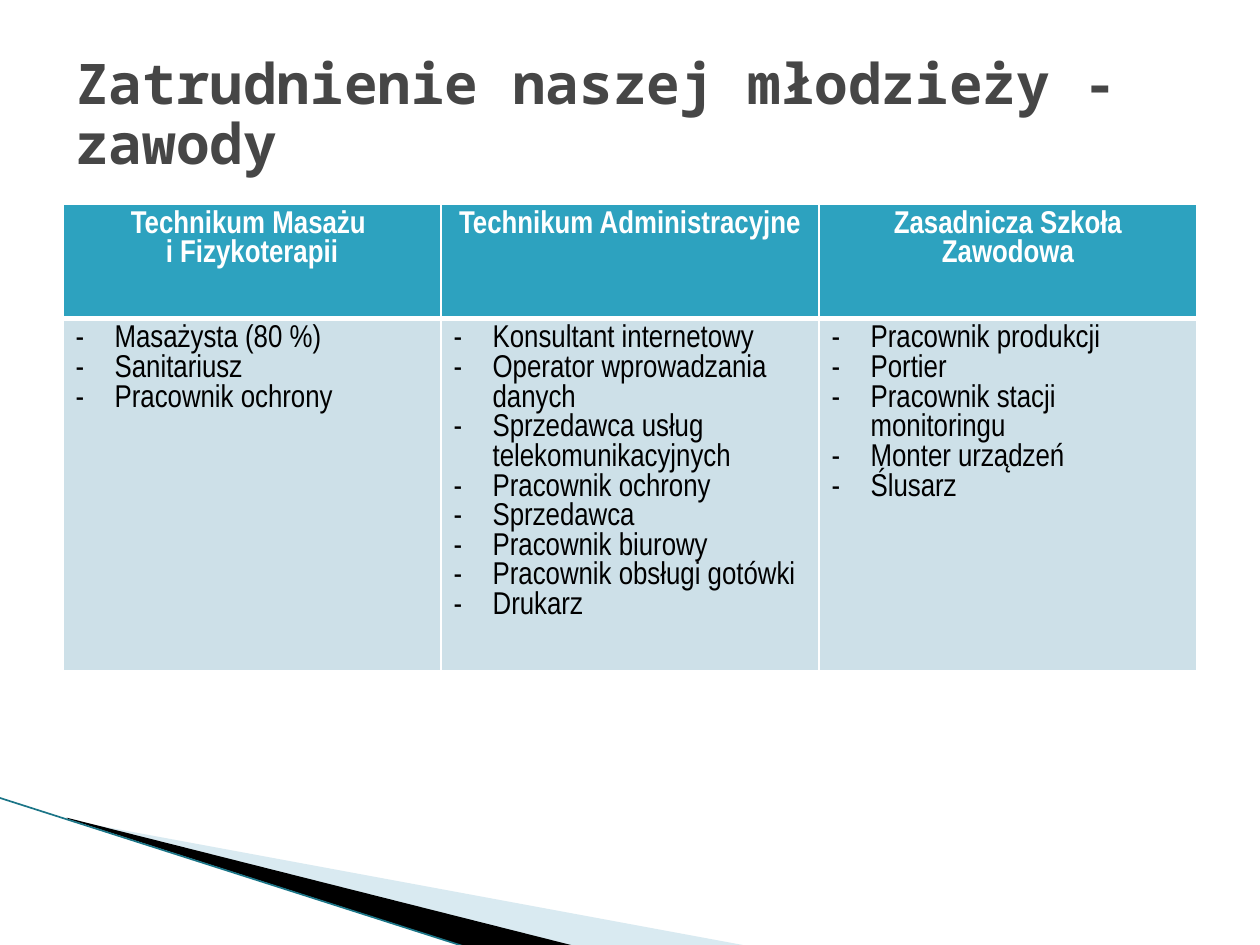
from lxml.etree import SubElement
from pptx import Presentation
from pptx.dml.color import RGBColor
from pptx.enum.shapes import MSO_CONNECTOR
from pptx.enum.text import MSO_ANCHOR, PP_ALIGN
from pptx.oxml.ns import qn
from pptx.util import Inches, Pt

TITLE = "Zatrudnienie naszej młodzieży - zawody"
JOBS_BY_SCHOOL = {
    "Technikum Masażu \ni Fizykoterapii": [
        "Masażysta (80 %)", "Sanitariusz", "Pracownik ochrony"],
    "Technikum Administracyjne": [
        "Konsultant internetowy", "Operator wprowadzania danych",
        "Sprzedawca usług telekomunikacyjnych", "Pracownik ochrony",
        "Sprzedawca", "Pracownik biurowy", "Pracownik obsługi gotówki",
        "Drukarz"],
    "Zasadnicza Szkoła Zawodowa": [
        "Pracownik produkcji", "Portier", "Pracownik stacji monitoringu",
        "Monter urządzeń", "Ślusarz"],
}
MARGIN, CONTENT_WIDTH = 0.5, 9
HEADER_HEIGHT, BODY_HEIGHT = 0.91, 2.79
INDENT = Inches(0.31)


def paint(color_format, hex_color):
    color_format.rgb = RGBColor.from_string(hex_color)


def fill_with(fill, hex_color):
    fill.solid()
    paint(fill.fore_color, hex_color)


def style_runs(paragraph, font_name, size, hex_color, bold):
    for run in paragraph.runs:
        run.font.name = font_name
        run.font.size = Pt(size)
        run.font.bold = bold
        paint(run.font.color, hex_color)


def add_wedge(slide, points, hex_color, alpha=None):
    corners = [(Inches(x), Inches(y)) for x, y in points]
    builder = slide.shapes.build_freeform(*corners[0])
    builder.add_line_segments(corners[1:], close=True)
    wedge = builder.convert_to_shape()
    wedge.shadow.inherit = False
    fill_with(wedge.fill, hex_color)
    wedge.line.fill.background()
    if alpha is not None:
        color = wedge.fill._xPr.find(qn("a:solidFill"))[0]
        SubElement(color, qn("a:alpha"), val=str(alpha * 1000))


def add_edge(slide, start, end, hex_color, width):
    ends = [Inches(value) for value in (*start, *end)]
    edge = slide.shapes.add_connector(MSO_CONNECTOR.STRAIGHT, *ends)
    paint(edge.line.color, hex_color)
    edge.line.width = Pt(width)
    SubElement(edge._element.spPr, qn("a:effectLst"))


def add_title(slide):
    title = slide.shapes.add_textbox(
        Inches(MARGIN), Inches(0.3), Inches(CONTENT_WIDTH), Inches(1.25))
    frame = title.text_frame
    frame.text = TITLE
    frame.word_wrap = True
    frame.vertical_anchor = MSO_ANCHOR.MIDDLE
    heading = frame.paragraphs[0]
    heading.line_spacing = 0.9
    style_runs(heading, "Noto Sans Mono", 32, "464646", True)


def border_cell(cell, bottom_width=1, top_width=1):
    properties = cell._tc.get_or_add_tcPr()
    widths = {"lnL": 1, "lnR": 1, "lnT": top_width, "lnB": bottom_width}
    # Borders come before the fill in the cell properties
    for position, (side, width) in enumerate(widths.items()):
        border = SubElement(properties, qn(f"a:{side}"), w=str(Pt(width)))
        solid = SubElement(border, qn("a:solidFill"))
        SubElement(solid, qn("a:srgbClr"), val="FFFFFF")
        properties.insert(position, border)


def fill_header(cell, school):
    heading = cell.text_frame.paragraphs[0]
    heading.text = school
    heading.alignment = PP_ALIGN.CENTER
    style_runs(heading, "Arial Narrow", 18, "FFFFFF", True)
    fill_with(cell.fill, "2DA2BF")
    border_cell(cell, bottom_width=3)


def fill_jobs(cell, jobs):
    cell.text_frame.text = "\n".join(jobs)
    for job in cell.text_frame.paragraphs:
        properties = job._p.get_or_add_pPr()
        properties.set("marL", str(INDENT))
        properties.set("indent", str(-INDENT))
        SubElement(properties, qn("a:buFont"), typeface="Arial Narrow")
        SubElement(properties, qn("a:buChar"), char="-")
        style_runs(job, "Arial Narrow", 18, "000000", False)
    fill_with(cell.fill, "CDE0E8")
    border_cell(cell, top_width=3)


def add_jobs_table(slide):
    table = slide.shapes.add_table(
        2, len(JOBS_BY_SCHOOL), Inches(MARGIN), Inches(1.62),
        Inches(CONTENT_WIDTH), Inches(HEADER_HEIGHT + BODY_HEIGHT)).table
    table.rows[0].height = Inches(HEADER_HEIGHT)
    table.rows[1].height = Inches(BODY_HEIGHT)
    for column, (school, jobs) in enumerate(JOBS_BY_SCHOOL.items()):
        fill_header(table.cell(0, column), school)
        fill_jobs(table.cell(1, column), jobs)


def main():
    deck = Presentation()
    deck.slide_width, deck.slide_height = Inches(10), Inches(7.5)
    slide = deck.slides.add_slide(deck.slide_layouts[6])

    # Corner decoration
    add_wedge(slide, [(0.55, 6.51), (5.95, 7.51), (4.56, 7.51), (0.55, 6.5)],
              "A0CBDC", alpha=40)
    add_wedge(slide, [(0.53, 6.49), (4.57, 7.51), (3.72, 7.52), (0.54, 6.5)],
              "000000")
    add_edge(slide, (-0.01, 6.33), (3.71, 7.52), "1B7587", 0.95)

    # Content
    add_jobs_table(slide)
    add_title(slide)

    deck.save("out.pptx")


if __name__ == "__main__":
    main()
